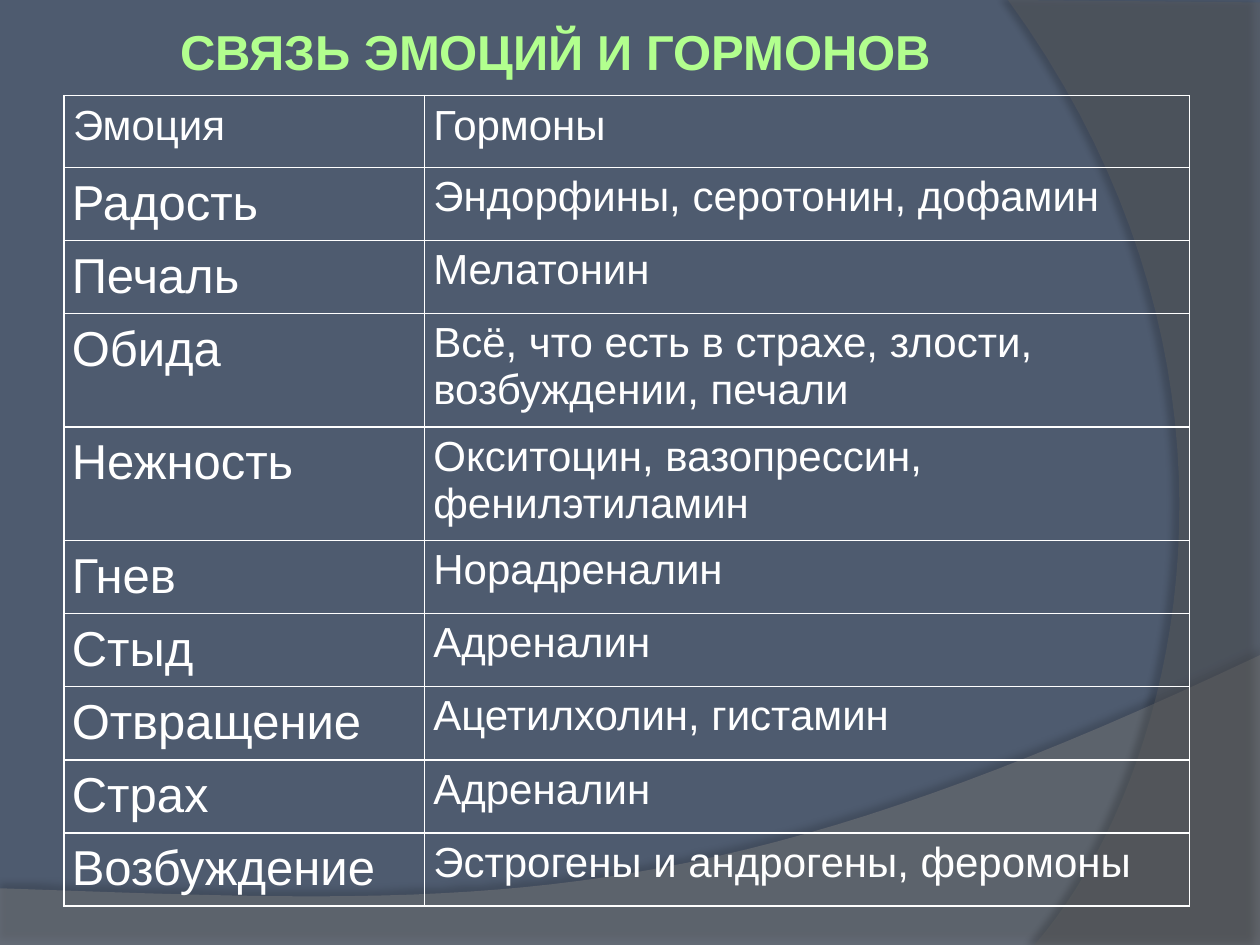
"""Build a slide with a table linking emotions and hormones."""
from dataclasses import dataclass

from lxml import etree
from pptx import Presentation
from pptx import util as u
from pptx.dml.color import RGBColor
from pptx.enum import text
from pptx.oxml import ns

BACKGROUND = RGBColor(0x4E, 0x5B, 0x6F)
WAVE_GREY = RGBColor(0x7F, 0x7F, 0x7F)
ARC_GREY = RGBColor(0x5E, 0x5E, 0x5E)
LIME = RGBColor(0xB2, 0xFF, 0x8E)
WHITE = RGBColor(0xFF, 0xFF, 0xFF)
BLACK = RGBColor(0, 0, 0)
CURVE_STEPS = 40

Point = tuple[float, float]


@dataclass(frozen=True)
class Swoosh:
    curve: tuple[Point, Point, Point, Point]
    corners: tuple[Point, ...]
    color: RGBColor
    alpha: int
    shadow_alpha: int
    shadow_angle: int


@dataclass(frozen=True)
class CellStyle:
    size: int
    margin_x: float
    margin_y: float
    line_spacing: float


@dataclass(frozen=True)
class Row:
    emotion: str
    hormones: str


SWOOSHES = (
    Swoosh(((10, 5.2), (5.59, 7.29), (3.91, 7.19), (0, 7.05)),
           ((0, 7.5), (10, 7.5)), WAVE_GREY, 45, 35, 270),
    Swoosh(((8.21, 7.5), (9.35, 6.19), (10.18, 3), (8, 0)),
           ((10, 0.02), (10, 7.5)), ARC_GREY, 40, 45, 180),
)
HEADER = Row("Эмоция", "Гормоны")
ROWS = (
    Row("Радость", "Эндорфины, серотонин, дофамин"),
    Row("Печаль", "Мелатонин"),
    Row("Обида", "Всё, что есть в страхе, злости, возбуждении, печали"),
    Row("Нежность", "Окситоцин, вазопрессин, фенилэтиламин"),
    Row("Гнев", "Норадреналин"),
    Row("Стыд", "Адреналин"),
    Row("Отвращение", "Ацетилхолин, гистамин"),
    Row("Страх", "Адреналин"),
    Row("Возбуждение", "Эстрогены и андрогены, феромоны"),
)
PLAIN = CellStyle(24, 0.07, 0.05, 1.0)
EMOTION = CellStyle(28, 0.06, 0, 1.15)


def set_attrs(obj, values: dict) -> None:
    for name, value in values.items():
        setattr(obj, name, value)


def add_node(parent, tag: str, **attrs):
    return etree.SubElement(parent, ns.qn(tag), {k: str(v) for k, v in attrs.items()})


def add_color(parent, color: RGBColor, alpha: int) -> None:
    clr = add_node(parent, "a:srgbClr", val=color)
    add_node(clr, "a:alpha", val=alpha * 1000)


def bezier(points: tuple[Point, ...], t: float) -> Point:
    weights = ((1 - t) ** 3, 3 * t * (1 - t) ** 2, 3 * t * t * (1 - t), t ** 3)
    return tuple(sum(w * p[axis] for w, p in zip(weights, points)) for axis in (0, 1))


def add_swoosh(s, swoosh: Swoosh) -> None:
    outline = [bezier(swoosh.curve, i / CURVE_STEPS) for i in range(CURVE_STEPS + 1)]
    points = [(u.Inches(x), u.Inches(y)) for x, y in (*outline, *swoosh.corners)]
    builder = s.shapes.build_freeform(*points[0], scale=1.0)
    builder.add_line_segments(points[1:], close=True)
    sp = builder.convert_to_shape()
    sp.fill.solid()
    sp.fill.fore_color.rgb = swoosh.color
    sp.line.fill.background()
    sp.shadow.inherit = False
    props = sp.element.spPr
    clr = props.find(".//" + ns.qn("a:solidFill"))[0]
    add_node(clr, "a:alpha", val=swoosh.alpha * 1000)
    shadow = add_node(props.find(ns.qn("a:effectLst")), "a:outerShdw",
                      blurRad=u.Pt(4), dist=u.Pt(4),
                      dir=swoosh.shadow_angle * 60000, rotWithShape=0)
    add_color(shadow, BLACK, swoosh.shadow_alpha)


def write(tf, content: str, color: RGBColor, size: int, bold: bool = False):
    p = tf.paragraphs[0]
    r = p.add_run()
    r.text = content
    set_attrs(r.font, {"name": "Arial", "size": u.Pt(size), "bold": bold})
    r.font.color.rgb = color
    return p


def add_title(s, content: str) -> None:
    sp = s.shapes.add_textbox(*map(u.Inches, (1.38, 0, 8.03, 0.81)))
    tf = sp.text_frame
    inset = u.Inches(0.05)
    set_attrs(tf, {"word_wrap": True, "vertical_anchor": text.MSO_ANCHOR.MIDDLE,
                   "margin_left": inset, "margin_right": inset,
                   "margin_top": inset, "margin_bottom": inset})
    write(tf, content, LIME, 28, bold=True)


def fill_cell(cell, content: str, style: CellStyle) -> None:
    mx, my = u.Inches(style.margin_x), u.Inches(style.margin_y)
    set_attrs(cell, {"margin_left": mx, "margin_right": mx,
                     "margin_top": my, "margin_bottom": my})
    write(cell.text_frame, content, WHITE, style.size).line_spacing = style.line_spacing
    props = cell._tc.get_or_add_tcPr()
    for side in ("a:lnL", "a:lnR", "a:lnT", "a:lnB"):
        ln = add_node(props, side, w=u.Pt(1))
        add_color(add_node(ln, "a:solidFill"), WHITE, 100)
    cell.fill.background()


def add_hormone_table(s) -> None:
    frame = s.shapes.add_table(len(ROWS) + 1, 2,
                               *map(u.Inches, (0.51, 0.76, 8.93, 5.79)))
    table = frame.table
    set_attrs(table, {"first_row": False, "horz_banding": False})
    for column, width in zip(table.columns, (2.86, 6.07)):
        column.width = u.Inches(width)
    for i, row in enumerate((HEADER, *ROWS)):
        table.rows[i].height = u.Inches(0.58 if i else 0.57)
        fill_cell(table.cell(i, 0), row.emotion, EMOTION if i else PLAIN)
        fill_cell(table.cell(i, 1), row.hormones, PLAIN)


def main() -> None:
    prs = Presentation()
    set_attrs(prs, {"slide_width": u.Inches(10), "slide_height": u.Inches(7.5)})
    s = prs.slides.add_slide(prs.slide_layouts[6])
    s.background.fill.solid()
    s.background.fill.fore_color.rgb = BACKGROUND
    for swoosh in SWOOSHES:
        add_swoosh(s, swoosh)
    add_title(s, "СВЯЗЬ ЭМОЦИЙ И ГОРМОНОВ")
    add_hormone_table(s)
    prs.save("out.pptx")


if __name__ == "__main__":
    main()
